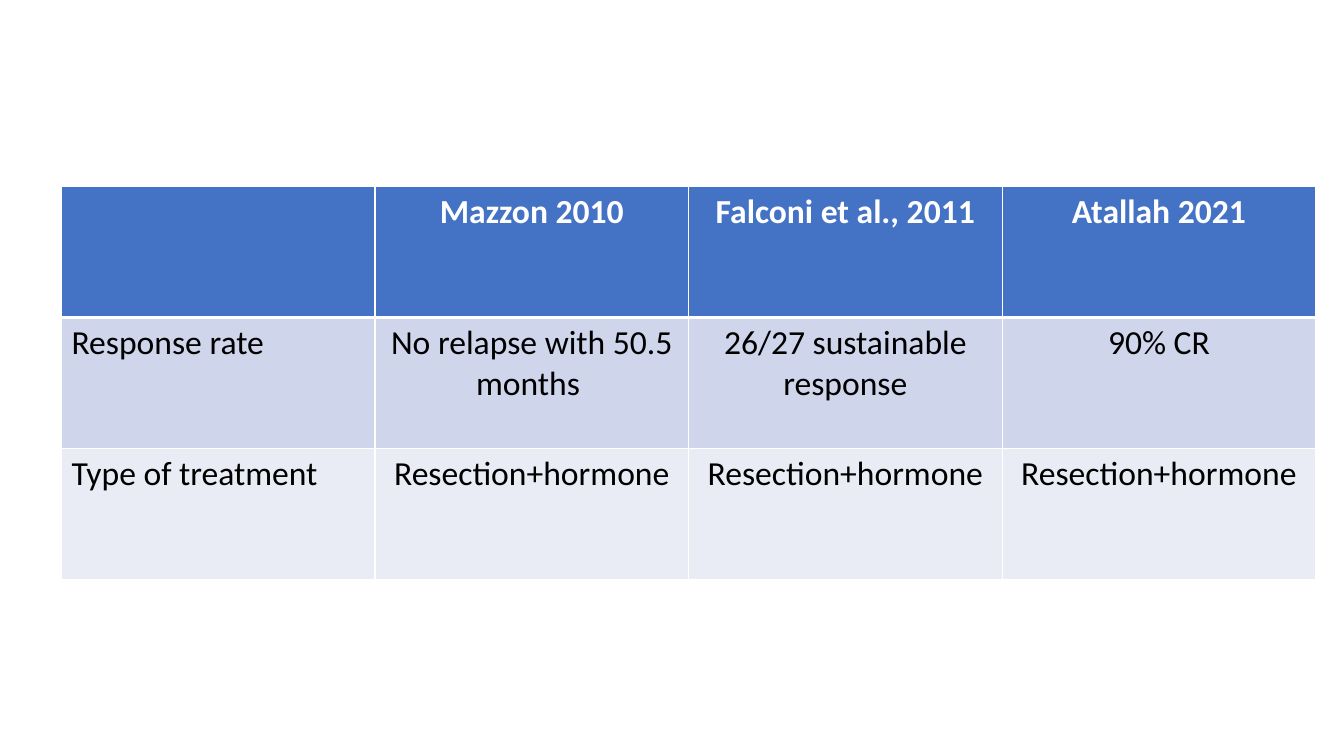
from dataclasses import dataclass

from lxml.etree import SubElement
from pptx import Presentation
from pptx.dml.color import RGBColor
from pptx.enum.text import PP_ALIGN
from pptx.oxml.ns import qn
from pptx.table import Table, _Cell
from pptx.util import Inches, Pt

WHITE = "FFFFFF"
BLACK = "000000"
COLUMN_WIDTH = 3.11
ROW_HEIGHT = 1.3


@dataclass(frozen=True)
class StudyRow:
    texts: tuple[str, ...]
    fill: str
    color: str = BLACK
    bold: bool = False
    top_line: float = 1
    bottom_line: float = 1


STUDY_ROWS = (
    StudyRow(("", "Mazzon 2010", "Falconi et al., 2011", "Atallah 2021"),
             "4472C4", WHITE, bold=True, bottom_line=3),
    StudyRow(("Response rate", "No relapse with 50.5 months ",
              "26/27 sustainable response", "90% CR"), "CFD5EA", top_line=3),
    StudyRow(("Type of treatment",) + ("Resection+hormone",) * 3, "E9EBF5"),
)


def rgb(hex_color: str) -> RGBColor:
    return RGBColor.from_string(hex_color)


def write_text(cell: _Cell, text: str, *, color: str, bold: bool,
               align: PP_ALIGN, size: float = 24, font: str = "Calibri") -> None:
    paragraph = cell.text_frame.paragraphs[0]
    paragraph.alignment = align
    paragraph.font.size = Pt(size)
    if not text:
        return
    run = paragraph.add_run()
    run.text = text
    run.font.name = font
    run.font.size = Pt(size)
    run.font.bold = bold
    run.font.color.rgb = rgb(color)


def add_borders(cell: _Cell, top: float, bottom: float) -> None:
    properties = cell._tc.get_or_add_tcPr()
    for side, width in (("L", 1), ("R", 1), ("T", top), ("B", bottom)):
        line = SubElement(properties, qn(f"a:ln{side}"), w=str(Pt(width)))
        SubElement(SubElement(line, qn("a:solidFill")), qn("a:srgbClr"), val=WHITE)


def fill_row(table: Table, index: int, row: StudyRow) -> None:
    table.rows[index].height = Inches(ROW_HEIGHT)
    for column, text in enumerate(row.texts):
        cell = table.cell(index, column)
        align = PP_ALIGN.CENTER if column else PP_ALIGN.LEFT
        write_text(cell, text, color=row.color, bold=row.bold, align=align)
        add_borders(cell, row.top_line, row.bottom_line)
        cell.fill.solid()
        cell.fill.fore_color.rgb = rgb(row.fill)


def main() -> None:
    deck = Presentation()
    deck.slide_width, deck.slide_height = Inches(13.33), Inches(7.5)
    slide = deck.slides.add_slide(deck.slide_layouts[6])
    column_count = len(STUDY_ROWS[0].texts)
    studies = slide.shapes.add_table(
        len(STUDY_ROWS), column_count, Inches(0.61), Inches(1.85),
        Inches(COLUMN_WIDTH * column_count), Inches(ROW_HEIGHT * len(STUDY_ROWS)),
    ).table
    for column in studies.columns:
        column.width = Inches(COLUMN_WIDTH)
    for index, row in enumerate(STUDY_ROWS):
        fill_row(studies, index, row)
    deck.save("out.pptx")


if __name__ == "__main__":
    main()
